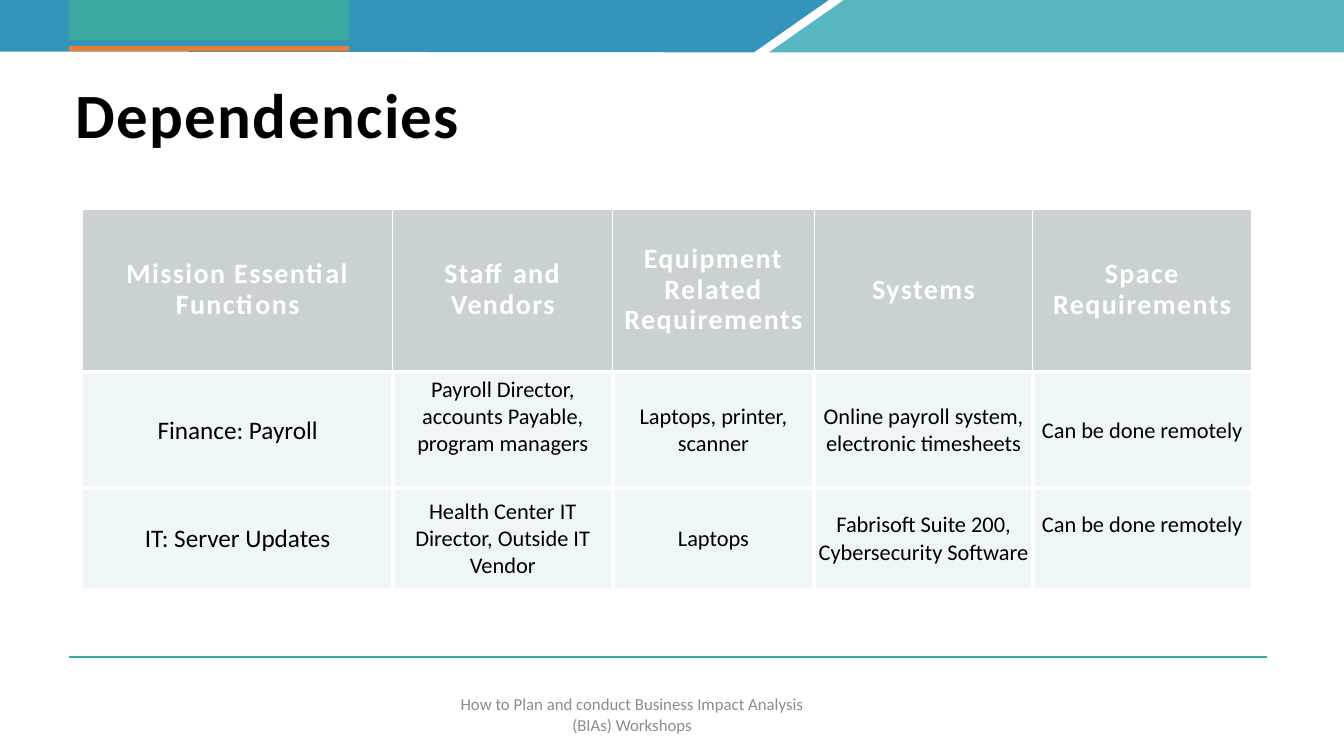
from lxml.etree import SubElement
from pptx import Presentation
from pptx.dml.color import RGBColor
from pptx.enum.shapes import MSO_CONNECTOR as Link, MSO_SHAPE as Shape
from pptx.enum.text import MSO_ANCHOR as Anchor, PP_ALIGN as Align
from pptx.oxml import parse_xml
from pptx.oxml.ns import nsdecls, qn
from pptx.util import Cm, Pt

FONT = "Calibri"
TEAL = "3AA89E"
WHITE = "FFFFFF"
COLS = [7.82, 5.54, 5.08, 5.51, 5.51]
ROWS = [4.09, 2.92, 2.54]
CELLS = [
    ["Mission Essential Functions", "Staff and Vendors",
     "Equipment Related Requirements", "Systems", "Space Requirements"],
    ["Finance: Payroll", "Payroll Director, accounts Payable, program managers",
     "Laptops, printer, scanner", "Online payroll system, electronic timesheets",
     "Can be done remotely"],
    ["IT: Server Updates", "Health Center IT Director, Outside IT Vendor",
     "Laptops", "Fabrisoft Suite 200, Cybersecurity Software",
     "Can be done remotely"],
]
RAISED = {(1, 1), (2, 4)}  # cells whose text sits above the middle


def color(code):
    return RGBColor.from_string(code)


def write(frame, text, size=16, ink="000000", bold=False, align=Align.CENTER,
          lead=None, track=0):
    """Fill a text frame; lead is line spacing, track is letter spacing in points."""
    frame.word_wrap = True
    para = frame.paragraphs[0]
    para.alignment = align
    if lead:
        para.line_spacing = lead
    run = para.add_run()
    run.text = text
    font = run.font
    font.name, font.size, font.bold = FONT, Pt(size), bold
    font.color.rgb = color(ink)
    if track:
        run._r.get_or_add_rPr().set("spc", str(track * 100))


def paint(shape, code):
    shape.shadow.inherit = False
    shape.fill.solid()
    shape.fill.fore_color.rgb = color(code)
    shape.line.fill.background()


def band(slide, points, code):
    start, *rest = [(Cm(x), Cm(y)) for x, y in points]
    outline = slide.shapes.build_freeform(*start)
    outline.add_line_segments(rest, close=True)
    paint(outline.convert_to_shape(), code)


def rule(slide, left, right, y, code, width):
    line = slide.shapes.add_connector(
        Link.STRAIGHT, Cm(left), Cm(y), Cm(right), Cm(y))
    line.line.color.rgb = color(code)
    line.line.width = Pt(width)
    SubElement(line._element.spPr, qn("a:effectLst"))


def border(cell, sides):
    """Draw white borders; sides maps L, R, T, B, in that order, to points."""
    props = cell._tc.get_or_add_tcPr()
    for place, (side, width) in enumerate(sides.items()):
        props.insert(place, parse_xml(
            f'<a:ln{side} {nsdecls("a")} w="{Pt(width)}"><a:solidFill>'
            f'<a:srgbClr val="{WHITE}"/></a:solidFill></a:ln{side}>'))


def style(cell, row, col):
    head = row == 0
    cell.vertical_anchor = Anchor.MIDDLE
    cell.margin_left = cell.margin_right = cell.margin_top = Cm(0.03)
    cell.margin_bottom = Cm(0.69 if (row, col) in RAISED else 0)
    cell.fill.solid()
    cell.fill.fore_color.rgb = color("CAD1D2" if head else "AAD6E7")
    if not head:
        tint = next(cell._tc.tcPr.iter(qn("a:srgbClr")))
        SubElement(tint, qn("a:alpha"), val="20000")
    side = 1 if head else 3
    inner = {"L": col > 0, "R": col < len(COLS) - 1,
             "T": row > 0, "B": row < len(ROWS) - 1}
    border(cell, {key: side if key in "LR" else 3
                  for key, shown in inner.items() if shown})


def grid(slide, left, top):
    table = slide.shapes.add_table(
        len(ROWS), len(COLS), Cm(left), Cm(top),
        Cm(sum(COLS)), Cm(sum(ROWS))).table
    table.horz_banding = False
    for col, width in zip(table.columns, COLS):
        col.width = Cm(width)
    for row, height in zip(table.rows, ROWS):
        row.height = Cm(height)
    for r, texts in enumerate(CELLS):
        for c, text in enumerate(texts):
            cell = table.cell(r, c)
            style(cell, r, c)
            if r == 0:
                write(cell.text_frame, text, size=20, ink=WHITE, bold=True,
                      lead=Pt(22), track=1)
            else:
                write(cell.text_frame, text, size=16 if c else 18)


def main():
    deck = Presentation()
    deck.slide_width, deck.slide_height = Cm(33.87), Cm(19.05)
    slide = deck.slides.add_slide(deck.slide_layouts[5])

    band(slide, [(0, 1.3), (-0.05, -0.03), (20.93, -0.03), (19, 1.32)], "3494BA")
    band(slide, [(21.31, -0.03), (33.87, 0), (33.87, 1.32), (19.38, 1.32)], "58B6C0")
    tab = slide.shapes.add_shape(Shape.RECTANGLE, Cm(1.75), 0, Cm(7.04), Cm(1.02))
    paint(tab, TEAL)
    rule(slide, 1.75, 8.79, 1.22, "ED7D31", 3)
    rule(slide, 1.75, 31.93, 16.56, TEAL, 1.75)

    title = slide.shapes.title
    title.left, title.top, title.width, title.height = (
        Cm(1.65), Cm(2.06), Cm(25.1), Cm(2.16))
    title.text_frame.vertical_anchor = Anchor.TOP
    write(title.text_frame, "Dependencies", size=45, bold=True,
          align=Align.LEFT, lead=0.85, track=1)

    foot = slide.shapes.add_textbox(Cm(11.13), Cm(17.63), Cm(9.6), Cm(0.74))
    foot.text_frame.vertical_anchor = Anchor.MIDDLE
    write(foot.text_frame,
          "How to Plan and conduct Business Impact Analysis (BIAs) Workshops",
          size=12, ink="8C8C8C")
    grid(slide, 2.08, 5.28)
    deck.save("out.pptx")


if __name__ == "__main__":
    main()
